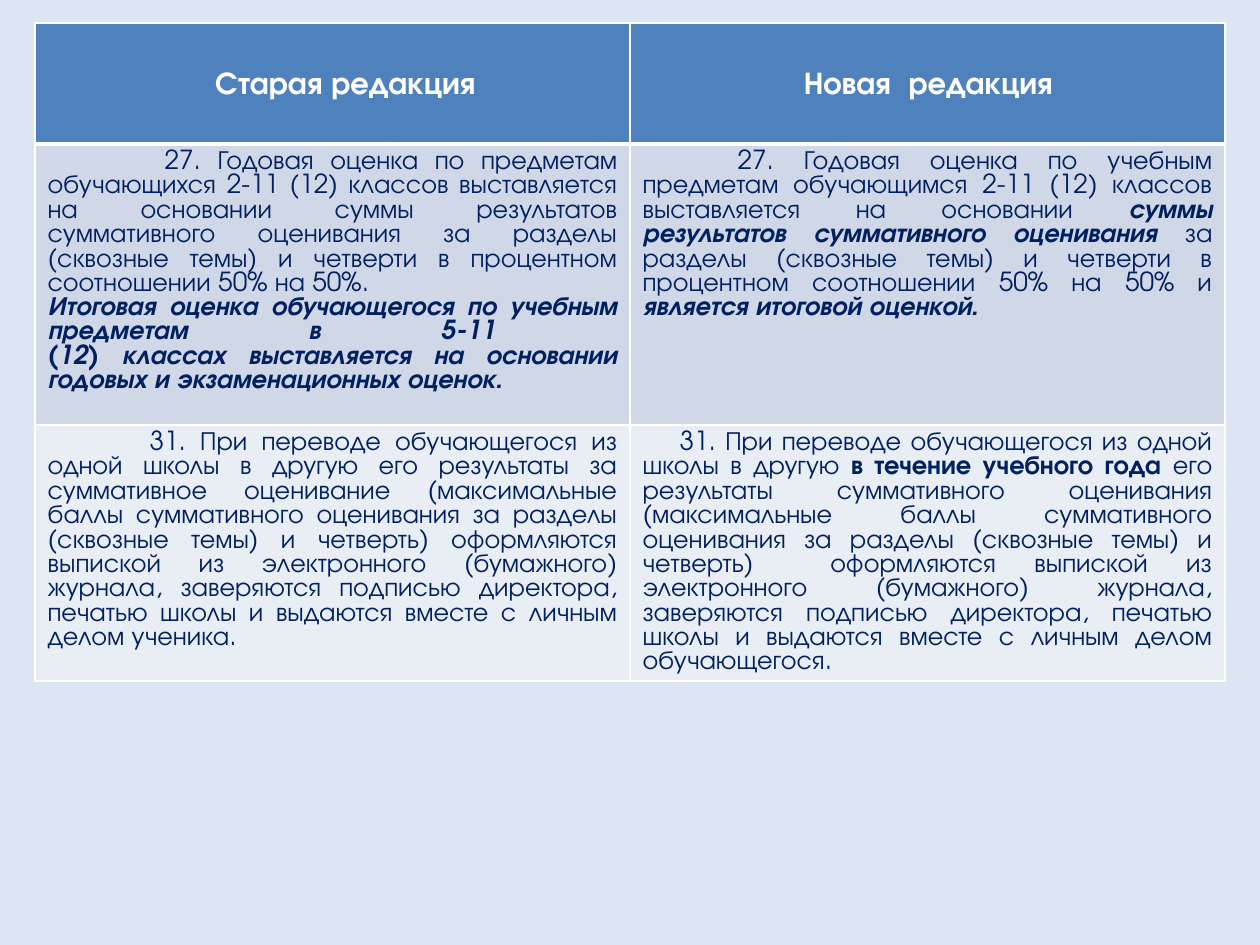
from lxml.etree import SubElement
from pptx import Presentation
from pptx.dml.color import RGBColor
from pptx.enum.text import MSO_ANCHOR, PP_ALIGN
from pptx.oxml.ns import qn
from pptx.util import Pt

PX = 914400 // 126
FONT = "TeX Gyre Adventor"
WHITE = RGBColor(0xFF, 0xFF, 0xFF)
NAVY = RGBColor(0x00, 0x20, 0x60)
HEADER_BLUE = RGBColor(0x4F, 0x81, 0xBD)
PAGE = RGBColor(0xDC, 0xE6, 0xF2)
BANDS = [RGBColor(0xD0, 0xD8, 0xE8), RGBColor(0xE9, 0xED, 0xF4)]

COL_WIDTH = 595
ROW_HEIGHTS = [121, 281, 256]

# Header: text, left margin, first-line indent
HEADERS = [("Старая редакция", 1, 25), ("Новая  редакция", 2, 0)]

# Cell: paragraphs of (first-line indent, [(text, style)]); b = bold, i = italic
ROWS = [
    [
        [
            (117, [("27. Годовая оценка по предметам обучающихся 2-11 (12) классов "
                    "выставляется на основании суммы результатов суммативного "
                    "оценивания за разделы (сквозные темы) и четверти в процентном "
                    "соотношении 50% на 50%.", "")]),
            (0, [("Итоговая оценка обучающегося по учебным предметам в 5-11 \n"
                  "(12) классах выставляется на основании годовых и "
                  "экзаменационных оценок.", "bi")]),
        ],
        [
            (95, [("27. Годовая оценка по учебным предметам обучающимся 2-11 (12) "
                   "классов выставляется на основании ", ""),
                  ("суммы результатов суммативного оценивания ", "bi"),
                  ("за разделы (сквозные темы) и четверти в процентном "
                   "соотношении 50% на 50% и ", ""),
                  ("является итоговой оценкой.", "bi")]),
        ],
    ],
    [
        [
            (102, [("31. При переводе обучающегося из одной школы в другую его "
                    "результаты за суммативное оценивание (максимальные баллы "
                    "суммативного оценивания за разделы (сквозные темы) и четверть) "
                    "оформляются выпиской из электронного (бумажного) журнала, "
                    "заверяются подписью директора, печатью школы и выдаются вместе "
                    "с личным делом ученика.", "")]),
        ],
        [
            (37, [("31. При переводе обучающегося из одной школы в другую ", ""),
                  ("в течение учебного года", "b"),
                  (" его результаты суммативного оценивания (максимальные баллы "
                   "суммативного оценивания за разделы (сквозные темы) и четверть)  "
                   "оформляются выпиской из электронного (бумажного) журнала, "
                   "заверяются подписью директора, печатью школы и выдаются вместе "
                   "с личным делом обучающегося.", "")]),
        ],
    ],
]


def add_text(p, text, size=15, color=NAVY, bold=False, italic=False):
    """Append text to a paragraph, with a line break at each newline."""
    for n, line in enumerate(text.split("\n")):
        if n:
            p.add_line_break()
        r = p.add_run()
        r.text = line
        font = r.font
        font.name, font.size = FONT, Pt(size)
        font.bold, font.italic = bold, italic
        font.color.rgb = color


def format_paragraph(p, align, margin=0, indent=0):
    p.alignment = align
    pPr = p._p.get_or_add_pPr()
    pPr.set("marL", str(margin * PX))
    pPr.set("indent", str(indent * PX))


def format_cell(cell, fill, top=1, bottom=1):
    """Give a cell white borders (widths in points) and a solid fill."""
    tcPr = cell._tc.get_or_add_tcPr()
    for side, width in (("L", 1), ("R", 1), ("T", top), ("B", bottom)):
        ln = SubElement(tcPr, qn(f"a:ln{side}"), w=str(Pt(width)))
        line_fill = SubElement(ln, qn("a:solidFill"))
        SubElement(line_fill, qn("a:srgbClr"), val=str(WHITE))
    cell.fill.solid()
    cell.fill.fore_color.rgb = fill


def fill_header(cell, text, margin, indent):
    format_cell(cell, HEADER_BLUE, bottom=3)
    cell.vertical_anchor = MSO_ANCHOR.MIDDLE
    cell.margin_left = cell.margin_right = 9 * PX
    cell.margin_top = cell.margin_bottom = 0
    p = cell.text_frame.paragraphs[0]
    format_paragraph(p, PP_ALIGN.CENTER, margin, indent)
    p.line_spacing = 1.15
    add_text(p, text, size=18, color=WHITE, bold=True)


def fill_body(cell, paragraphs, fill, top):
    format_cell(cell, fill, top=top)
    tf = cell.text_frame
    for n, (indent, runs) in enumerate(paragraphs):
        p = tf.add_paragraph() if n else tf.paragraphs[0]
        format_paragraph(p, PP_ALIGN.JUSTIFY, indent=indent)
        for text, style in runs:
            add_text(p, text, bold="b" in style, italic="i" in style)


def add_comparison(slide):
    table = slide.shapes.add_table(
        len(ROW_HEIGHTS), len(HEADERS), 35 * PX, 23 * PX,
        len(HEADERS) * COL_WIDTH * PX, sum(ROW_HEIGHTS) * PX).table
    for row, height in zip(table.rows, ROW_HEIGHTS):
        row.height = height * PX
    for col, header in enumerate(HEADERS):
        table.columns[col].width = COL_WIDTH * PX
        fill_header(table.cell(0, col), *header)
    for n, (cells, band) in enumerate(zip(ROWS, BANDS), start=1):
        for col, paragraphs in enumerate(cells):
            fill_body(table.cell(n, col), paragraphs, band, top=3 if n == 1 else 1)


def main():
    prs = Presentation()
    prs.slide_width, prs.slide_height = 1260 * PX, 945 * PX
    slide = prs.slides.add_slide(prs.slide_layouts[6])
    slide.background.fill.solid()
    slide.background.fill.fore_color.rgb = PAGE
    add_comparison(slide)
    prs.save("out.pptx")


if __name__ == "__main__":
    main()
